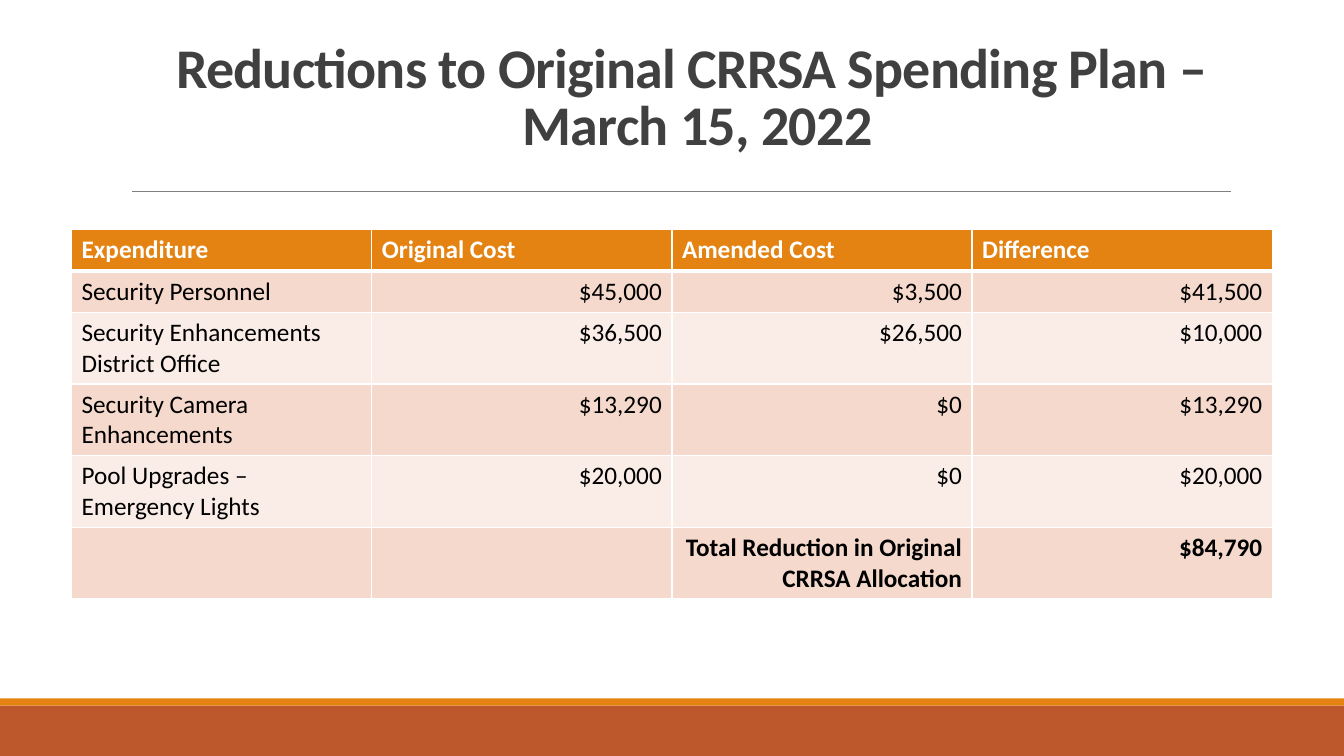
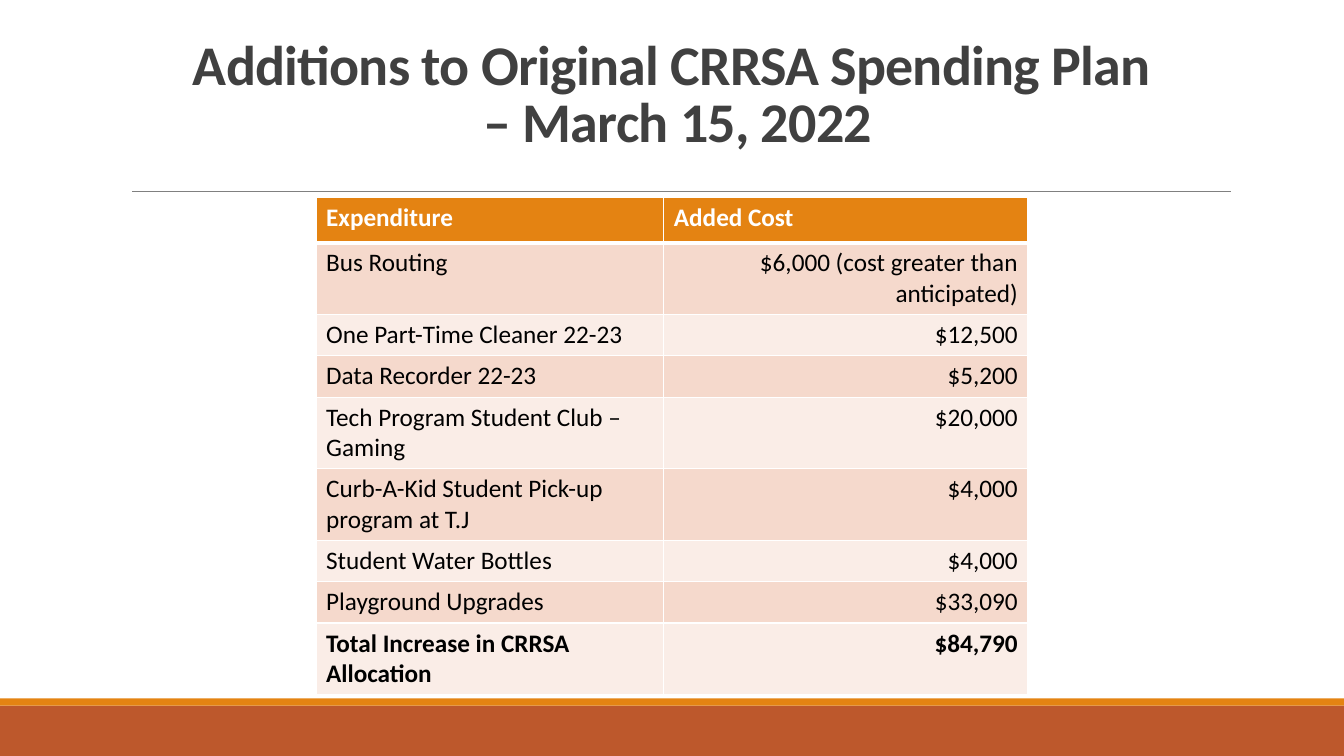
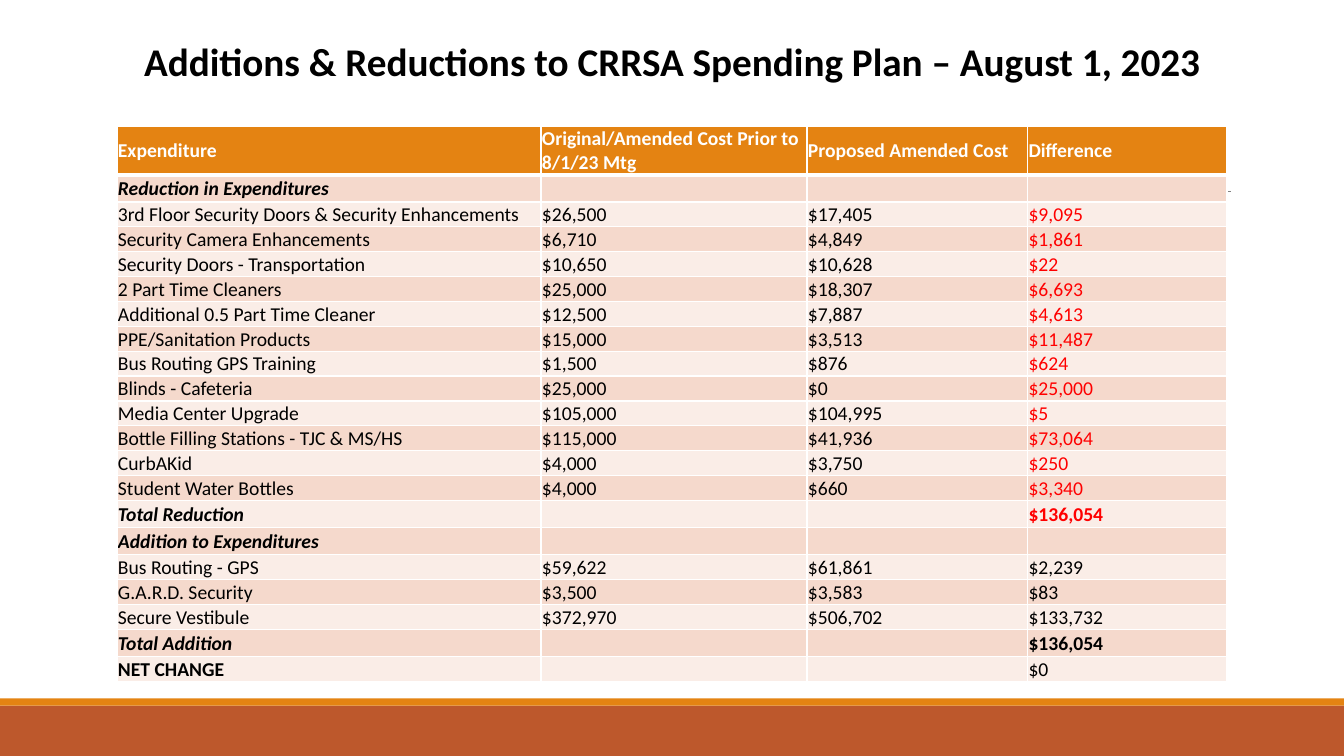
from dataclasses import dataclass
from lxml import etree
from pptx import Presentation
from pptx.dml.color import RGBColor
from pptx.enum.shapes import MSO_CONNECTOR, MSO_SHAPE
from pptx.enum.text import MSO_ANCHOR, MSO_AUTO_SIZE, PP_ALIGN
from pptx.oxml.ns import qn
from pptx.util import Inches, Pt

LEFT, CENTER, RIGHT = PP_ALIGN.LEFT, PP_ALIGN.CENTER, PP_ALIGN.RIGHT
TOP, MIDDLE, BOTTOM = MSO_ANCHOR.TOP, MSO_ANCHOR.MIDDLE, MSO_ANCHOR.BOTTOM
NO_AUTOFIT = MSO_AUTO_SIZE.NONE
RECTANGLE, STRAIGHT = MSO_SHAPE.RECTANGLE, MSO_CONNECTOR.STRAIGHT

FONT = "Calibri"
WHITE, BLACK, RED = "FFFFFF", "000000", "FF0000"
ORANGE, RUST, RULE_GRAY, TITLE_GRAY = "E48312", "BD582C", "808080", "404040"
ROW_FILLS = ("F5D9CC", "FAEDE7")
SLIDE_WIDTH, SLIDE_HEIGHT = 13.33, 7.5
TITLE_ONLY = 5
THIN, THICK = 1, 3


@dataclass(frozen=True)
class Box:
    left: float
    top: float
    width: float
    height: float

    def lengths(self) -> list[Inches]:
        return [Inches(value) for value in (self.left, self.top, self.width, self.height)]


@dataclass(frozen=True)
class Band:
    box: Box
    color: str


@dataclass(frozen=True)
class Title:
    text: str
    box: Box
    size: float = 40
    color: str = TITLE_GRAY
    anchor: MSO_ANCHOR = BOTTOM
    line_spacing: float = 0.85
    letter_spacing: float = -0.5


@dataclass(frozen=True)
class Row:
    cells: tuple[str, ...]
    label_bold: bool = False
    label_italic: bool = False
    amounts_bold: bool = False
    difference_color: str = BLACK
    height: float = 0.41


@dataclass(frozen=True)
class CostTable:
    top: float
    width: float
    column_shares: tuple[float, ...]
    header: Row
    rows: list[Row]
    size: int = 18
    amount_alignment: PP_ALIGN = RIGHT
    anchor: MSO_ANCHOR = TOP
    margins: tuple[float, ...] = (0.1, 0.05, 0.1, 0.05)


BANDS = (
    Band(Box(0, 7, SLIDE_WIDTH, 0.5), RUST),
    Band(Box(0, 6.93, SLIDE_WIDTH, 0.07), ORANGE),
)


def rgb(color: str) -> RGBColor:
    return RGBColor.from_string(color)


def format_paragraph(paragraph, size: float, color: str, bold: bool = False,
                     italic: bool = False, alignment: PP_ALIGN = LEFT) -> None:
    paragraph.alignment = alignment
    font = paragraph.font
    font.name, font.size = FONT, Pt(size)
    font.bold, font.italic = bold, italic
    font.color.rgb = rgb(color)


def add_frame(slide) -> None:
    """Draw the rule under the title and the bands at the foot."""
    rule = slide.shapes.add_connector(
        STRAIGHT, Inches(1.31), Inches(1.9), Inches(12.21), Inches(1.9))
    rule.line.color.rgb = rgb(RULE_GRAY)
    rule.line.width = Pt(0.5)
    etree.SubElement(rule._element.spPr, qn("a:effectLst"))
    for band in BANDS:
        shape = slide.shapes.add_shape(RECTANGLE, *band.box.lengths())
        shape.shadow.inherit = False
        shape.fill.solid()
        shape.fill.fore_color.rgb = rgb(band.color)
        shape.line.fill.background()


def set_title(slide, title: Title) -> None:
    shape = slide.shapes.title
    shape.left, shape.top, shape.width, shape.height = title.box.lengths()
    frame = shape.text_frame
    frame.text = title.text
    frame.word_wrap = True
    frame.auto_size = NO_AUTOFIT
    frame.vertical_anchor = title.anchor
    paragraph = frame.paragraphs[0]
    paragraph.line_spacing = title.line_spacing
    format_paragraph(paragraph, title.size, title.color, bold=True, alignment=CENTER)
    for run in paragraph.runs:
        run._r.get_or_add_rPr().set("spc", str(int(title.letter_spacing * 100)))


def set_borders(cell, top: float, bottom: float) -> None:
    properties = cell._tc.get_or_add_tcPr()
    sides = (("a:lnL", THIN), ("a:lnR", THIN), ("a:lnT", top), ("a:lnB", bottom))
    for position, (tag, width) in enumerate(sides):
        line = etree.Element(qn(tag), w=str(int(Pt(width))))
        fill = etree.SubElement(line, qn("a:solidFill"))
        etree.SubElement(fill, qn("a:srgbClr"), val=WHITE)
        properties.insert(position, line)


def add_cost_table(slide, costs: CostTable) -> None:
    """Draw a table centred on the slide, with alternating row fills."""
    rows = [costs.header, *costs.rows]
    shares = costs.column_shares
    box = Box((SLIDE_WIDTH - costs.width) / 2, costs.top,
              costs.width, sum(row.height for row in rows))
    table = slide.shapes.add_table(len(rows), len(shares), *box.lengths()).table
    for column, share in zip(table.columns, shares):
        column.width = Inches(costs.width * share / sum(shares))

    for row_index, row in enumerate(rows):
        table.rows[row_index].height = Inches(row.height)
        is_header = row_index == 0
        for column_index, text in enumerate(row.cells):
            cell = table.cell(row_index, column_index)
            is_label = column_index == 0
            is_last = column_index == len(shares) - 1
            cell.text = text
            cell.vertical_anchor = costs.anchor
            (cell.margin_left, cell.margin_top, cell.margin_right,
             cell.margin_bottom) = [Inches(margin) for margin in costs.margins]
            cell.fill.solid()
            cell.fill.fore_color.rgb = rgb(ORANGE if is_header else ROW_FILLS[(row_index - 1) % 2])
            set_borders(cell, THICK if row_index == 1 else THIN, THICK if is_header else THIN)

            color = row.difference_color if is_last else BLACK
            paragraph = cell.text_frame.paragraphs[0]
            format_paragraph(
                paragraph, costs.size, WHITE if is_header else color,
                bold=row.label_bold if is_label else row.amounts_bold,
                italic=is_label and row.label_italic,
                alignment=LEFT if is_header or is_label else costs.amount_alignment)
            if not text:
                # An empty cell keeps the row height of its text size
                etree.SubElement(paragraph._p, qn("a:endParaRPr"), sz=str(costs.size * 100))


def header_row(*cells: str, height: float = 0.41) -> Row:
    return Row(cells, label_bold=True, amounts_bold=True, height=height)


def detail_row(*cells: str, color: str = BLACK) -> Row:
    return Row(cells, difference_color=color, height=0.24)


def section_row(label: str, total: str = "", color: str = BLACK) -> Row:
    return Row((label, "", "", total), True, True, True, color, 0.27)


# Slide content
REDUCTIONS = CostTable(
    2.28, 11.91, (1, 1, 1, 1),
    header_row("Expenditure", "Original Cost", "Amended Cost", "Difference"),
    [
        Row(("Security Personnel", "$45,000", "$3,500", "$41,500")),
        Row(("Security Enhancements District Office", "$36,500", "$26,500", "$10,000")),
        Row(("Security Camera Enhancements", "$13,290", "$0", "$13,290")),
        Row(("Pool Upgrades – Emergency Lights", "$20,000", "$0", "$20,000")),
        Row(("", "", "Total Reduction in Original CRRSA Allocation", "$84,790"),
            amounts_bold=True),
    ])

ADDITIONS = CostTable(
    1.96, 7.06, (3.45, 3.61),
    header_row("Expenditure", "Added Cost", height=0.45),
    [
        Row(("Bus Routing", "$6,000 (cost greater than anticipated)")),
        Row(("One Part-Time Cleaner 22-23", "$12,500")),
        Row(("Data Recorder 22-23", "$5,200")),
        Row(("Tech Program Student Club – Gaming", "$20,000")),
        Row(("Curb-A-Kid Student Pick-up program at T.J", "$4,000")),
        Row(("Student Water Bottles", "$4,000")),
        Row(("Playground Upgrades", "$33,090")),
        Row(("Total Increase in CRRSA Allocation", "$84,790"),
            label_bold=True, amounts_bold=True),
    ])

REDUCED_ITEMS = (
    ("3rd Floor Security Doors & Security Enhancements", "$26,500", "$17,405", "$9,095"),
    ("Security Camera Enhancements", "$6,710", "$4,849", "$1,861"),
    ("Security Doors - Transportation", "$10,650", "$10,628", "$22"),
    ("2 Part Time Cleaners", "$25,000", "$18,307", "$6,693"),
    ("Additional 0.5 Part Time Cleaner", "$12,500", "$7,887", "$4,613"),
    ("PPE/Sanitation Products", "$15,000", "$3,513", "$11,487"),
    ("Bus Routing GPS Training", "$1,500", "$876", "$624"),
    ("Blinds - Cafeteria", "$25,000", "$0", "$25,000"),
    ("Media Center Upgrade", "$105,000", "$104,995", "$5"),
    ("Bottle Filling Stations - TJC & MS/HS", "$115,000", "$41,936", "$73,064"),
    ("CurbAKid", "$4,000", "$3,750", "$250"),
    ("Student Water Bottles", "$4,000", "$660", "$3,340"),
)
ADDED_ITEMS = (
    ("Bus Routing - GPS", "$59,622", "$61,861", "$2,239"),
    ("G.A.R.D. Security", "$3,500", "$3,583", "$83"),
    ("Secure Vestibule", "$372,970", "$506,702", "$133,732"),
)
AUGUST_CHANGES = CostTable(
    1.25, 11.01, (4.21, 2.64, 2.19, 1.98),
    header_row("Expenditure", "Original/Amended Cost Prior to 8/1/23 Mtg",
               "Proposed Amended Cost", "Difference", height=0.48),
    [
        section_row("Reduction in Expenditures"),
        *(detail_row(*item, color=RED) for item in REDUCED_ITEMS),
        section_row("Total Reduction", "$136,054", RED),
        section_row("Addition to Expenditures"),
        *(detail_row(*item) for item in ADDED_ITEMS),
        section_row("Total Addition", "$136,054"),
        Row(("NET CHANGE", "", "", "$0"), label_bold=True, height=0.24),
    ],
    size=14, amount_alignment=LEFT, anchor=MIDDLE, margins=(0.01, 0.01, 0.01, 0))

SLIDES = (
    (Title("Reductions to Original CRRSA Spending Plan –\v March 15, 2022",
           Box(0.94, 0.64, 11.84, 0.97)), REDUCTIONS),
    (Title("Additions to Original CRRSA Spending Plan\v – March 15, 2022",
           Box(1.05, 0.55, 11.23, 1.03)), ADDITIONS),
    (Title("Additions & Reductions to CRRSA Spending Plan – August 1, 2023",
           Box(1.27, 0.32, 10.79, 0.57), 28, BLACK, TOP, 1.0, 0), AUGUST_CHANGES),
)


def main() -> None:
    presentation = Presentation()
    presentation.slide_width = Inches(SLIDE_WIDTH)
    presentation.slide_height = Inches(SLIDE_HEIGHT)
    for title, costs in SLIDES:
        slide = presentation.slides.add_slide(presentation.slide_layouts[TITLE_ONLY])
        set_title(slide, title)
        add_frame(slide)
        add_cost_table(slide, costs)
    presentation.save("out.pptx")


if __name__ == "__main__":
    main()
